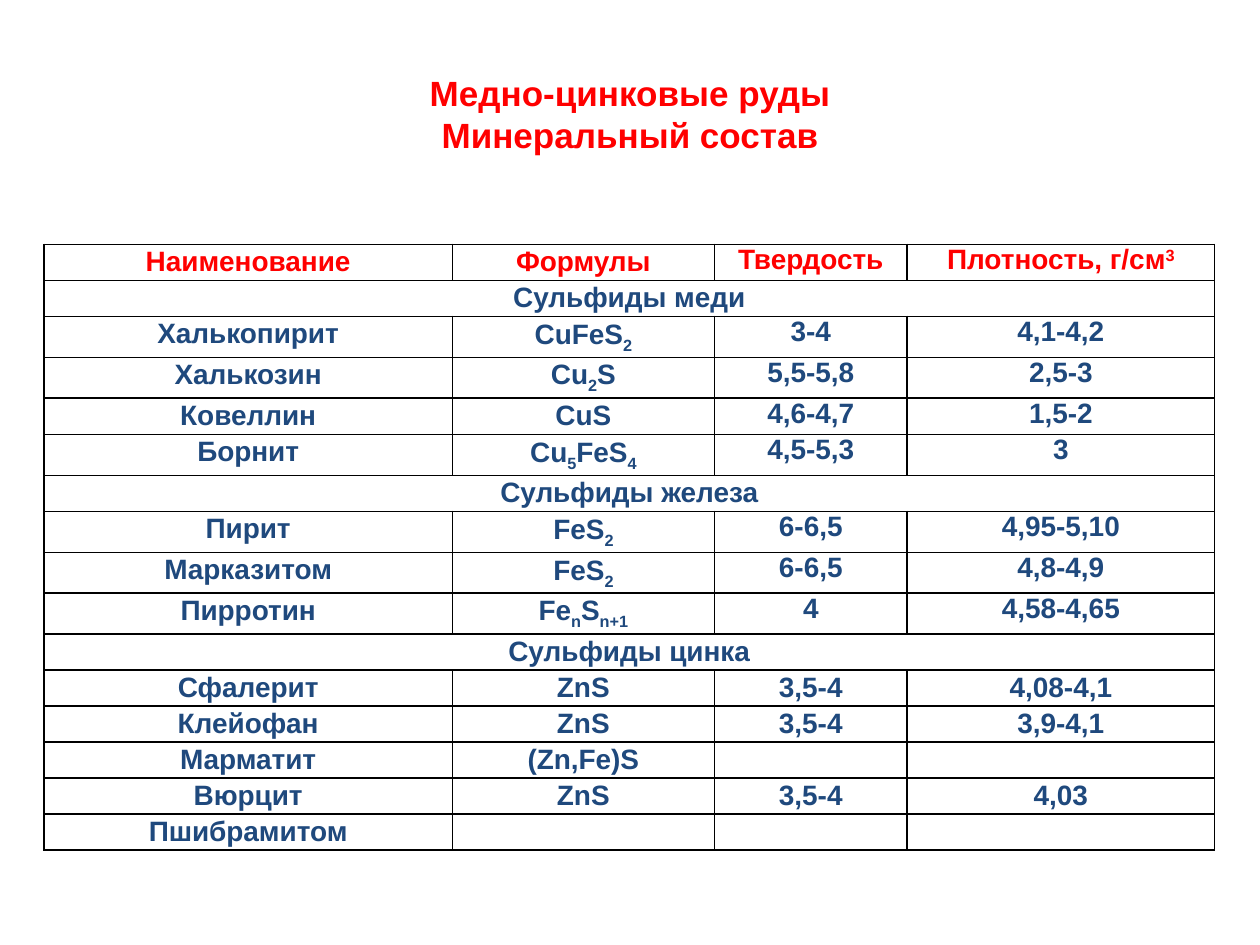
from lxml import etree
from pptx import Presentation
from pptx.dml.color import RGBColor
from pptx.enum import text
from pptx.oxml import ns
from pptx.util import Inches, Pt

THEME = {
    "font": "Arial",
    "accent": RGBColor.from_string("FF0000"),
    "body": RGBColor.from_string("1F497D"),
    "border": "000000",
    "border_width": Pt(1),
    "title_size": Pt(20),
    "table_size": Pt(16),
}
LOOSE = {"line_spacing": 1.07, "space_after": Pt(8)}
INSETS = {
    "margin_left": Inches(0.06), "margin_right": Inches(0.06),
    "margin_top": 0, "margin_bottom": 0,
}


def write(paragraph, marked, size, color, baseline=0):
    """Add centred bold runs; every second part between bars is raised or lowered."""
    paragraph.alignment = text.PP_ALIGN.CENTER
    for i, part in enumerate(marked.split("|")):
        if not part:
            continue
        run = paragraph.add_run()
        run.text = part
        values = {"name": THEME["font"], "size": size, "bold": True}
        for key, value in values.items():
            setattr(run.font, key, value)
        run.font.color.rgb = color
        if i % 2:
            run.font._element.set("baseline", str(baseline))


def add_borders(cell):
    properties = cell._tc.get_or_add_tcPr()
    for i, side in enumerate(("lnL", "lnR", "lnT", "lnB")):
        line = etree.Element(ns.qn(f"a:{side}"), w=str(THEME["border_width"]))
        fill = etree.SubElement(line, ns.qn("a:solidFill"))
        etree.SubElement(fill, ns.qn("a:srgbClr"), val=THEME["border"])
        properties.insert(i, line)


prs = Presentation()
prs.slide_width, prs.slide_height = Inches(10), Inches(7.5)
slide = prs.slides.add_slide(prs.slide_layouts[6])

title = slide.shapes.add_textbox(
    Inches(0.59), Inches(0.52), Inches(8.82), Inches(0.77)).text_frame
title.word_wrap = True
write(title.paragraphs[0], "Медно-цинковые руды", THEME["title_size"], THEME["accent"])
write(title.add_paragraph(), "Минеральный состав", THEME["title_size"], THEME["accent"])

# Bars enclose superscripts in the header and subscripts in the formulas.
# A row with a single entry is a section heading across the whole table.
minerals = [
    ("Наименование", "Формулы", "Твердость", "Плотность, г/см|3|"),
    ("Сульфиды меди",),
    ("Халькопирит", "CuFeS|2|", "3-4", "4,1-4,2"),
    ("Халькозин", "Cu|2|S", "5,5-5,8", "2,5-3"),
    ("Ковеллин", "CuS", "4,6-4,7", "1,5-2"),
    ("Борнит", "Cu|5|FeS|4|", "4,5-5,3", "3"),
    ("Сульфиды железа",),
    ("Пирит", "FeS|2|", "6-6,5", "4,95-5,10"),
    ("Марказитом", "FeS|2|", "6-6,5", "4,8-4,9"),
    ("Пирротин", "Fe|n|S|n+1|", "4", "4,58-4,65"),
    ("Сульфиды цинка",),
    ("Сфалерит", "ZnS", "3,5-4", "4,08-4,1"),
    ("Клейофан", "ZnS", "3,5-4", "3,9-4,1"),
    ("Марматит", "(Zn,Fe)S", "", ""),
    ("Вюрцит", "ZnS", "3,5-4", "4,03"),
    ("Пшибрамитом", "", "", ""),
]
column_widths = [3.24, 2.08, 1.53, 2.44]
zinc_start = minerals.index(("Сульфиды цинка",))

table = slide.shapes.add_table(
    len(minerals), len(column_widths),
    Inches(0.35), Inches(1.94), Inches(sum(column_widths)), Inches(4.4)).table
table.first_row = table.horz_banding = False
for column, width in zip(table.columns, column_widths):
    column.width = Inches(width)

for r, entries in enumerate(minerals):
    has_subscript = r > 0 and "|" in "".join(entries)
    table.rows[r].height = Inches(
        0.32 if has_subscript else 0.29 if entries[0] == "Ковеллин" else 0.28)
    if len(entries) == 1:
        table.cell(r, 0).merge(table.cell(r, len(column_widths) - 1))
    for c in range(len(column_widths)):
        cell = table.cell(r, c)
        for key, value in INSETS.items():
            setattr(cell, key, value)
        cell.fill.background()
        add_borders(cell)
        paragraph = cell.text_frame.paragraphs[0]
        entry = entries[c] if c < len(entries) else ""
        if not entry:
            end = etree.SubElement(paragraph._p, ns.qn("a:endParaRPr"))
            end.set("sz", str(int(THEME["table_size"].pt * 100)))
            continue
        if c < 2 or r > zinc_start:
            for key, value in LOOSE.items():
                setattr(paragraph, key, value)
        write(paragraph, entry, THEME["table_size"],
              THEME["body"] if r else THEME["accent"], -25000 if r else 30000)

prs.save("out.pptx")
